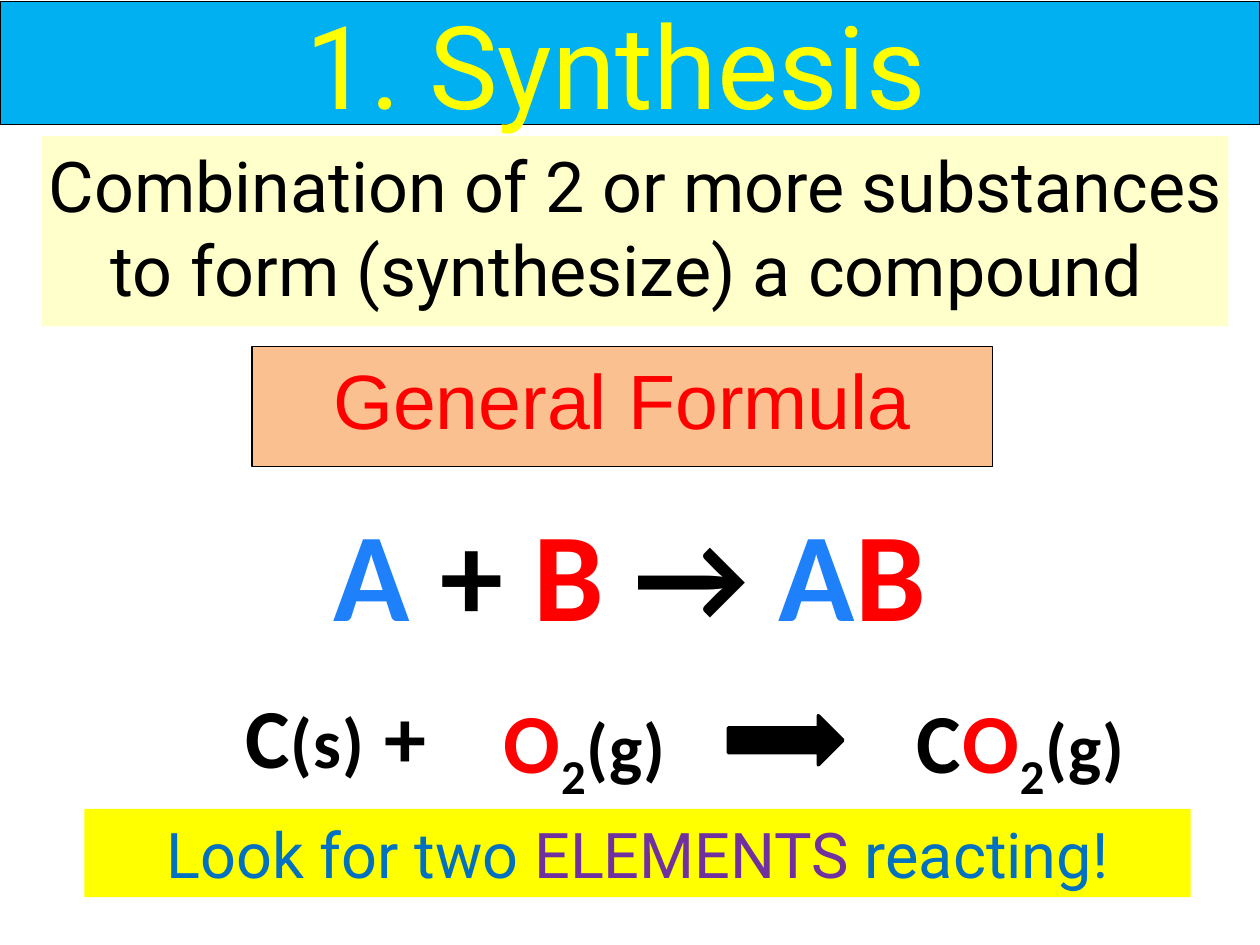
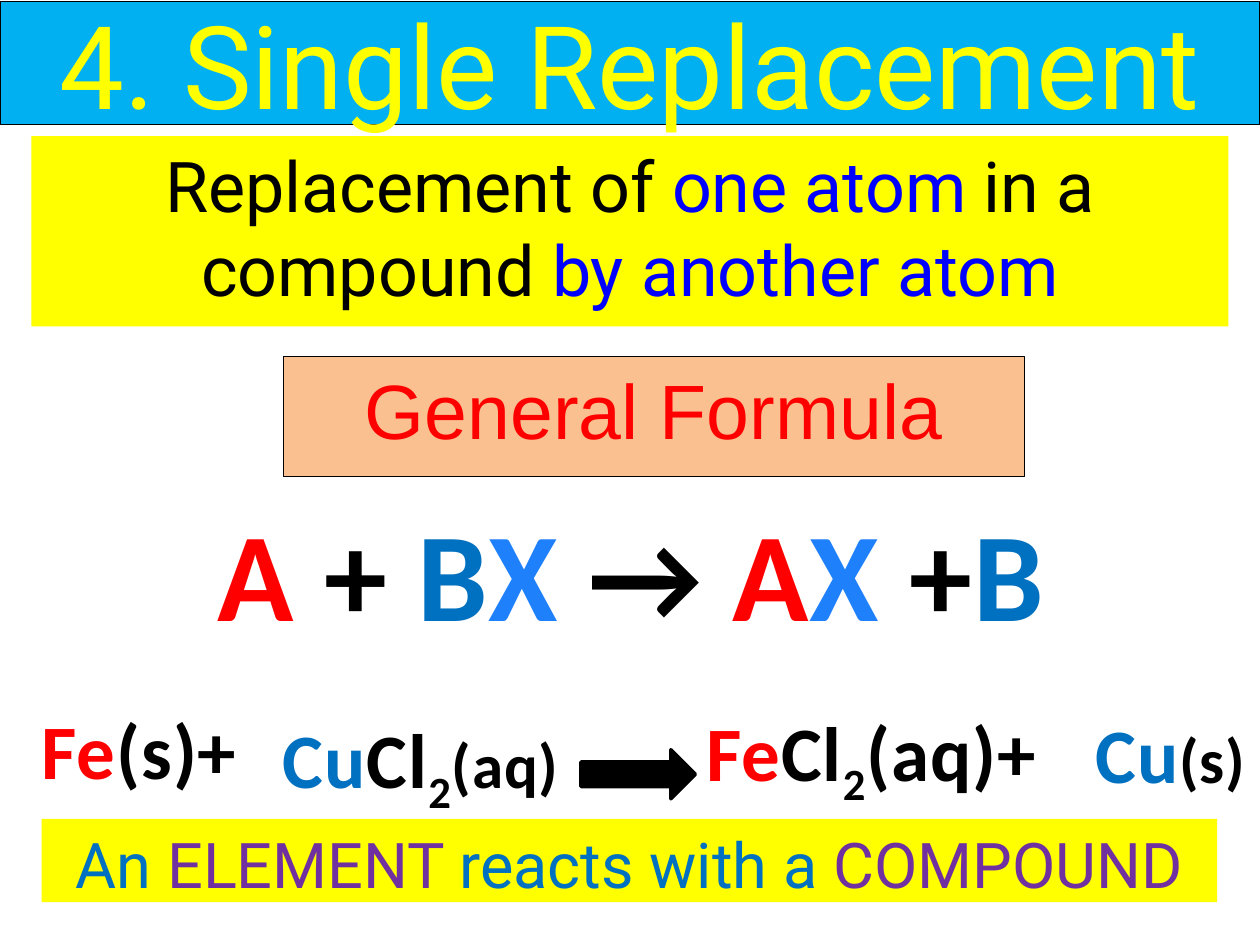
"""Build two slides on types of chemical reaction."""
from pptx import Presentation
from pptx.dml.color import RGBColor
from pptx.enum.shapes import MSO_SHAPE
from pptx.enum.text import MSO_ANCHOR, PP_ALIGN
from pptx.util import Inches, Pt

RECT, ARROW = MSO_SHAPE.RECTANGLE, MSO_SHAPE.RIGHT_ARROW
TOP, MIDDLE = MSO_ANCHOR.TOP, MSO_ANCHOR.MIDDLE
LEFT, CENTER = PP_ALIGN.LEFT, PP_ALIGN.CENTER

COLS, ROWS = 10, 7.5
BLACK, RED, YELLOW, CREAM = "000000", "FF0000", "FFFF00", "FFFFCC"
SKY, PEACH, AZURE = "00B0F0", "FAC090", "1E80FA"
STEEL, PURPLE, BLUE = "0070C0", "7030A0", "0000FF"

TITLE = {"name": "Roboto", "size": Pt(66)}
DEFINITION = {"name": "Roboto", "size": Pt(40)}
HEADING = {"name": "Arial", "size": Pt(44)}
HINT = {"name": "Roboto", "size": Pt(36)}
FORMULA = {"name": "Calibri", "size": Pt(72), "bold": True}
TIGHT = {"margin_left": 0, "margin_top": Inches(0.05), "margin_right": 0,
         "margin_bottom": 0, "vertical_anchor": TOP}


def rgb(value):
    """Turn a hex string into a colour."""
    return RGBColor.from_string(value)


def apply(target, formats):
    """Set every attribute named in a dict of format values."""
    for name, value in formats.items():
        setattr(target, name, value)


def place(prs, left, top, width, height):
    """Convert grid columns and rows to slide lengths."""
    col, row = prs.slide_width / COLS, prs.slide_height / ROWS
    return [int(n) for n in (left * col, top * row, width * col, height * row)]


def write(sp, runs, font, frame, align=CENTER, spacing=0):
    """Fill a shape with runs of (text, colour[, size or 'sub'])."""
    tf = sp.text_frame
    apply(tf, {"word_wrap": True, **frame})
    p = tf.paragraphs[0]
    p.alignment = align
    for text, color, *extra in runs:
        r = p.add_run()
        r.text = text
        apply(r.font, font)
        r.font.color.rgb = rgb(color)
        r_pr = r._r.get_or_add_rPr()
        if spacing:
            r_pr.set("spc", str(spacing))
        if extra == ["sub"]:
            r_pr.set("baseline", "-25000")
        elif extra:
            r.font.size = Pt(extra[0])


def add_block(prs, s, box, fill, line=0, kind=RECT):
    """Add a filled preset shape, outlined in black if line is set."""
    sp = s.shapes.add_shape(kind, *place(prs, *box))
    sp.shadow.inherit = False
    sp.fill.solid()
    sp.fill.fore_color.rgb = rgb(fill)
    if line:
        sp.line.color.rgb = rgb(BLACK)
        sp.line.width = Pt(line)
    else:
        sp.line.fill.background()
    return sp


def add_title(prs, s, text):
    """Add the title band across the slide."""
    sp = add_block(prs, s, (0, 0.01, COLS, 0.98), SKY, 0.75)
    write(sp, [(text, YELLOW)], TITLE, {"vertical_anchor": MIDDLE})


def add_panel(prs, s, box, fill, runs, font, line=0):
    """Add a coloured panel of centred text."""
    write(add_block(prs, s, box, fill, line), runs, font, TIGHT)


def add_heading(prs, s, left, top):
    """Add the box that announces the general formula."""
    add_panel(prs, s, (left, top, 5.88, 0.95), PEACH,
              [("General Formula", RED)], HEADING, 0.75)


def add_formula(prs, s, left, width, runs):
    """Add the general formula on one line."""
    sp = s.shapes.add_textbox(*place(prs, left, 3.88, width, 1.31))
    write(sp, runs, FORMULA, {"word_wrap": False}, spacing=50)


def add_species(prs, s, left, top, width, size, runs, align=CENTER):
    """Add one substance of the example reaction."""
    sp = s.shapes.add_textbox(*place(prs, left, top, width, size / 53))
    write(sp, runs, {**FORMULA, "size": Pt(size)}, {}, align, 50)


def add_yield_arrow(prs, s, left, top):
    """Add the block arrow between reactants and products."""
    add_block(prs, s, (left, top, 0.91, 0.39), BLACK, 2, ARROW)


def build_synthesis(prs, s):
    """Draw the synthesis slide."""
    add_title(prs, s, "1. Synthesis ")
    add_panel(prs, s, (0.33, 1.08, 9.42, 1.51), CREAM,
              [("Combination of 2 or more substances to form "
                "(synthesize) a compound ", BLACK)], DEFINITION)
    add_heading(prs, s, 2, 2.75)
    add_formula(prs, s, 2.28, 5.44, [
        ("A ", AZURE), ("+ ", BLACK), ("B ", RED), ("→", BLACK),
        (" A", AZURE), ("B", RED)])
    oxide = [("O", RED), ("2", BLACK, "sub"), ("(g)", BLACK, 40)]
    add_species(prs, s, 1.85, 5.38, 2.39, 48,
                [("C", BLACK), ("(s)", BLACK, 40), (" +", BLACK)], LEFT)
    add_species(prs, s, 3.5, 5.42, 2.28, 48, oxide)
    add_yield_arrow(prs, s, 5.78, 5.68)
    add_species(prs, s, 6.96, 5.42, 2.28, 48, [("C", BLACK)] + oxide)
    add_panel(prs, s, (0.67, 6.42, 8.78, 0.7), YELLOW, [
        ("Look for two ", STEEL), ("ELEMENTS ", PURPLE),
        ("reacting!", STEEL)], HINT)


def build_replacement(prs, s):
    """Draw the single replacement slide."""
    add_title(prs, s, "4. Single Replacement")
    add_panel(prs, s, (0.25, 1.08, 9.5, 1.51), YELLOW, [
        ("Replacement of ", BLACK), ("one atom ", BLUE),
        ("in a compound ", BLACK), ("by another atom", BLUE)], DEFINITION)
    add_heading(prs, s, 2.25, 2.83)
    add_formula(prs, s, 1.2, 7.61, [
        ("A ", RED), ("+ ", BLACK), ("B", STEEL), ("X ", AZURE),
        ("→ ", BLACK), ("A", RED), ("X ", AZURE), ("+", BLACK), ("B", STEEL)])
    iron, copper = ("Fe", RED), ("Cu", STEEL)
    chloride = [("Cl", BLACK), ("2", BLACK, "sub")]
    add_species(prs, s, -0.03, 5.53, 2.27, 44, [iron, ("(s)+", BLACK)])
    add_species(prs, s, 1.85, 5.6, 2.98, 44,
                [copper, *chloride, ("(aq)", BLACK, 36)])
    add_yield_arrow(prs, s, 4.61, 5.95)
    add_species(prs, s, 5.51, 5.54, 3.57, 44,
                [iron, *chloride, ("(aq)+", BLACK)], LEFT)
    add_species(prs, s, 8.15, 5.56, 2.28, 44, [copper, ("(s)", BLACK, 36)])
    add_panel(prs, s, (0.33, 6.5, 9.33, 0.66), YELLOW, [
        ("An ", STEEL), ("ELEMENT ", PURPLE), ("reacts with a ", STEEL),
        ("COMPOUND", PURPLE)], HINT)


def main():
    """Build and save the presentation."""
    prs = Presentation()
    apply(prs, {"slide_width": Inches(10), "slide_height": Inches(7.5)})
    for build in (build_synthesis, build_replacement):
        build(prs, prs.slides.add_slide(prs.slide_layouts[6]))
    prs.save("out.pptx")


if __name__ == "__main__":
    main()
